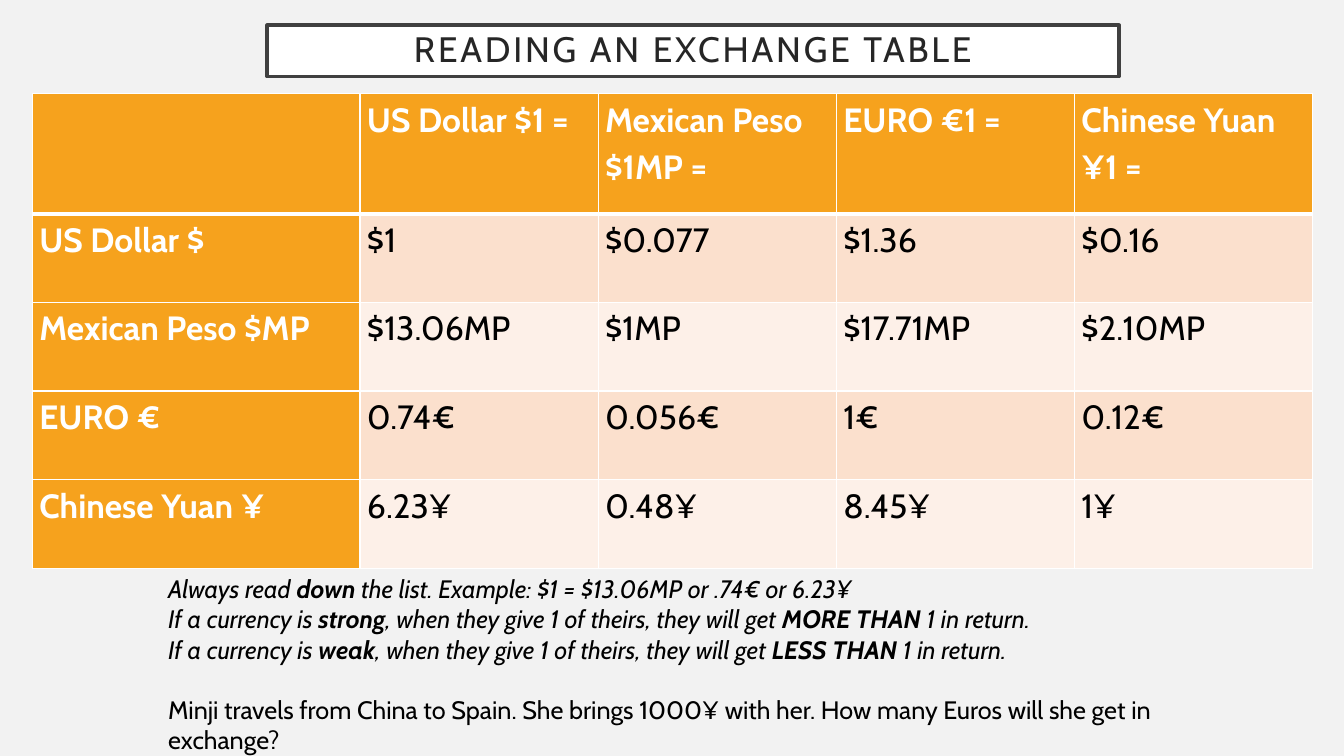
from lxml import etree
from pptx import Presentation, util as u
from pptx.dml.color import RGBColor
from pptx.enum import shapes, text
from pptx.oxml import ns

FONT = "Cabin"
BACKGROUND = RGBColor(0xF2, 0xF2, 0xF2)
WHITE = RGBColor(0xFF, 0xFF, 0xFF)
BLACK = RGBColor(0, 0, 0)
FRAME = RGBColor(0x40, 0x40, 0x40)
TITLE = RGBColor(0x26, 0x26, 0x26)
ORANGE = RGBColor(0xF6, 0xA2, 0x1D)
BANDS = [RGBColor(0xFB, 0xE0, 0xCD), RGBColor(0xFD, 0xF0, 0xE8)]

RATES = [
    ["", "US Dollar $1 =", "Mexican Peso $1MP =", "EURO €1 =", "Chinese Yuan ¥1 ="],
    ["US Dollar $", "$1", "$0.077", "$1.36", "$0.16"],
    ["Mexican Peso $MP", "$13.06MP", "$1MP", "$17.71MP", "$2.10MP"],
    ["EURO €", "0.74€", "0.056€", "1€", "0.12€"],
    ["Chinese Yuan ¥", "6.23¥", "0.48¥", "8.45¥", "1¥"],
]
RULES = [
    ["Always read ", "down", " the list. Example: $1 = $13.06MP or .74€ or 6.23¥"],
    ["If a currency is ", "strong", ", when they give 1 of theirs, they will get ",
     "MORE THAN", " 1 in return."],
    ["If a currency is ", "weak", ", when they give 1 of theirs, they will get ",
     "LESS THAN", " 1 in return."],
]
QUESTION = ("Minji travels from China to Spain. She brings 1000¥ with her. "
            "How many Euros will she get in exchange?")


def set_font(font, size, color, bold=None, italic=None):
    font.name, font.size, font.bold, font.italic = FONT, u.Pt(size), bold, italic
    font.color.rgb = color


def add_title(page, left, top, width, height):
    box = page.shapes.add_shape(shapes.MSO_SHAPE.RECTANGLE, *map(u.Inches, (left, top, width, height)))
    box.shadow.inherit = False
    box.fill.solid()
    box.fill.fore_color.rgb = WHITE
    box.line.color.rgb = FRAME
    box.line.width = u.Pt(2.5)
    frame = box.text_frame
    frame.margin_left = frame.margin_right = u.Inches(0.2)
    frame.margin_top = frame.margin_bottom = 0
    frame.vertical_anchor = text.MSO_ANCHOR.MIDDLE
    para = frame.paragraphs[0]
    para.alignment = text.PP_ALIGN.CENTER
    para.line_spacing = 0.9
    set_font(para.font, 25.2, TITLE)
    span = para.add_run()
    span.text = "READING AN EXCHANGE TABLE"
    span._r.get_or_add_rPr().set("spc", "200")


def add_borders(cell, row):
    properties = cell._tc.get_or_add_tcPr()
    heavy_side = {0: "B", 1: "T"}.get(row)
    for side in "LRTB":
        width = u.Pt(3 if side == heavy_side else 1)
        line = etree.SubElement(properties, ns.qn(f"a:ln{side}"), w=str(width))
        fill = etree.SubElement(line, ns.qn("a:solidFill"))
        etree.SubElement(fill, ns.qn("a:srgbClr"), val=str(WHITE))


def fill_cell(cell, value, row, column):
    heading = row == 0 or column == 0
    add_borders(cell, row)
    cell.fill.solid()
    cell.fill.fore_color.rgb = ORANGE if heading else BANDS[(row - 1) % 2]
    cell.margin_left = cell.margin_right = u.Inches(0.07)
    cell.margin_top = cell.margin_bottom = 0
    cell.text = value
    para = cell.text_frame.paragraphs[0]
    para.line_spacing = 1.15
    set_font(para.font, 24, WHITE if heading else BLACK, bold=heading)


def add_rates(page, left, top, width, height):
    label_width, header_height = 3.25, 1.19
    count = len(RATES)
    table = page.shapes.add_table(count, count, *map(u.Inches, (left, top, width, height))).table
    for index in range(count):
        table.columns[index].width = u.Inches(
            (width - label_width) / (count - 1) if index else label_width)
        table.rows[index].height = u.Inches(
            (height - header_height) / (count - 1) if index else header_height)
    for row, values in enumerate(RATES):
        for column, value in enumerate(values):
            fill_cell(table.cell(row, column), value, row, column)


def add_notes(page, left, top, width, height):
    frame = page.shapes.add_textbox(*map(u.Inches, (left, top, width, height))).text_frame
    frame.word_wrap = True
    para = frame.paragraphs[0]
    for parts in RULES:
        set_font(para.font, 18, BLACK, italic=True)
        for index, part in enumerate(parts):
            span = para.add_run()
            span.text = part
            span.font.bold = index % 2 == 1
        para = frame.add_paragraph()
    para.text = QUESTION
    para.space_before = u.Pt(21.6)
    set_font(para.font, 18, BLACK)


def main():
    deck = Presentation()
    deck.slide_width, deck.slide_height = u.Inches(13.33), u.Inches(7.5)
    page = deck.slides.add_slide(deck.slide_layouts[6])
    page.background.fill.solid()
    page.background.fill.fore_color.rgb = BACKGROUND
    add_title(page, 2.65, 0.25, 8.45, 0.51)
    add_rates(page, 0.32, 0.93, 12.7, 4.71)
    add_notes(page, 1.57, 5.64, 10.61, 2.52)
    deck.save("out.pptx")


if __name__ == "__main__":
    main()
